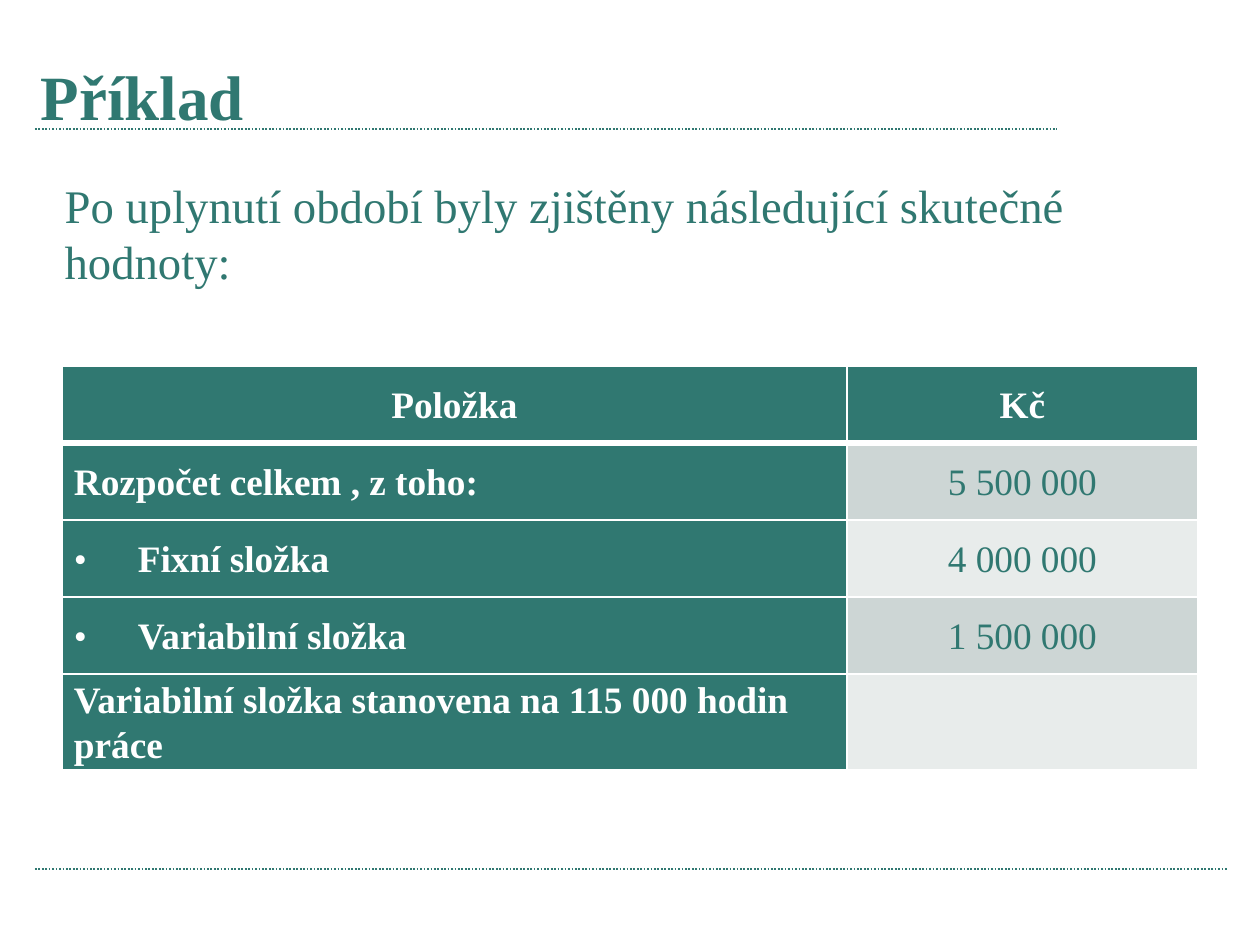
from lxml.etree import SubElement
from pptx import Presentation
from pptx.dml.color import RGBColor
from pptx.enum.dml import MSO_LINE
from pptx.enum.shapes import MSO_CONNECTOR
from pptx.enum.text import MSO_ANCHOR, MSO_AUTO_SIZE, PP_ALIGN
from pptx.oxml.ns import qn
from pptx.util import Emu, Pt

FONT = "Times New Roman"
TEAL, WHITE = "307871", "FFFFFF"
BANDS = ["CDD6D5", "E8ECEB"]


def px(length):
    return Emu(round(length * 914400 / 168))


def add_run(paragraph, text, size, color, bold=False):
    run = paragraph.add_run()
    run.text = text
    run.font.name = FONT
    run.font.size = Pt(size)
    run.font.bold = bold
    run.font.color.rgb = RGBColor.from_string(color)


presentation = Presentation()
presentation.slide_width, presentation.slide_height = px(1260), px(945)
slide = presentation.slides.add_slide(presentation.slide_layouts[5])

# Dotted rules under the title and above the footer
for right, y in [(1057, 129), (1228, 869)]:
    rule = slide.shapes.add_connector(MSO_CONNECTOR.STRAIGHT, px(35), px(y), px(right), px(y))
    rule.line.color.rgb = RGBColor.from_string(TEAL)
    rule.line.width = Pt(0.75)
    rule.line.dash_style = MSO_LINE.ROUND_DOT
    SubElement(rule.element.spPr, qn("a:effectLst"))

# Title
title = slide.shapes.title
title.left, title.top, title.width, title.height = px(24), px(49), px(1110), px(99)
title.text_frame.vertical_anchor = MSO_ANCHOR.MIDDLE
title.text_frame.margin_top, title.text_frame.margin_bottom = px(5), px(11)
title_paragraph = title.text_frame.paragraphs[0]
title_paragraph.alignment = PP_ALIGN.LEFT
add_run(title_paragraph, "Příklad", 27, TEAL, bold=True)

# Introductory sentence
introduction = slide.shapes.add_textbox(px(48), px(169), px(1191), px(129))
introduction.text_frame.word_wrap = True
introduction.text_frame.auto_size = MSO_AUTO_SIZE.SHAPE_TO_FIT_TEXT
add_run(introduction.text_frame.paragraphs[0],
        "Po uplynutí období byly zjištěny následující skutečné hodnoty:", 20, TEAL)

# Budget table: item, amount, whether the item is bulleted
budget_rows = [
    ("Položka", "Kč", False),
    ("Rozpočet celkem , z toho:", "5 500 000", False),
    ("Fixní složka", "4 000 000", True),
    ("Variabilní složka", "1 500 000", True),
    ("Variabilní složka stanovena na 115 000 hodin práce", "", False),
]
table = slide.shapes.add_table(len(budget_rows), 2, px(62), px(366), px(1136), px(402)).table
for column, width in zip(table.columns, [785, 351]):
    column.width = px(width)

for row_index, (item, amount, bulleted) in enumerate(budget_rows):
    table.rows[row_index].height = px(77)
    for column_index, text in enumerate([item, amount]):
        cell = table.cell(row_index, column_index)
        is_header = row_index == 0
        is_dark = is_header or column_index == 0
        cell.vertical_anchor = MSO_ANCHOR.MIDDLE
        cell.margin_left = cell.margin_right = px(12)
        cell.margin_top = cell.margin_bottom = 0

        # White borders, thick below the header
        properties = cell._tc.get_or_add_tcPr()
        for side in ["lnL", "lnR", "lnT", "lnB"]:
            thick = (row_index, side) in [(0, "lnB"), (1, "lnT")]
            border = SubElement(properties, qn(f"a:{side}"), w=str(Pt(3 if thick else 1)))
            border_fill = SubElement(border, qn("a:solidFill"))
            SubElement(border_fill, qn("a:srgbClr"), val=WHITE)
        cell.fill.solid()
        fill_color = TEAL if is_dark else BANDS[(row_index - 1) % 2]
        cell.fill.fore_color.rgb = RGBColor.from_string(fill_color)

        # Cell text
        if not text:
            continue
        paragraph = cell.text_frame.paragraphs[0]
        if bulleted and column_index == 0:
            paragraph_properties = paragraph._p.get_or_add_pPr()
            paragraph_properties.set("marL", str(px(64)))
            paragraph_properties.set("indent", str(-px(64)))
            SubElement(paragraph_properties, qn("a:buFont"), typeface=FONT)
            SubElement(paragraph_properties, qn("a:buChar"), char="•")
        paragraph.line_spacing = 1.07
        centred = is_header or column_index == 1
        paragraph.alignment = PP_ALIGN.CENTER if centred else PP_ALIGN.LEFT
        add_run(paragraph, text, 16, WHITE if is_dark else TEAL, bold=is_dark)

presentation.save("out.pptx")
